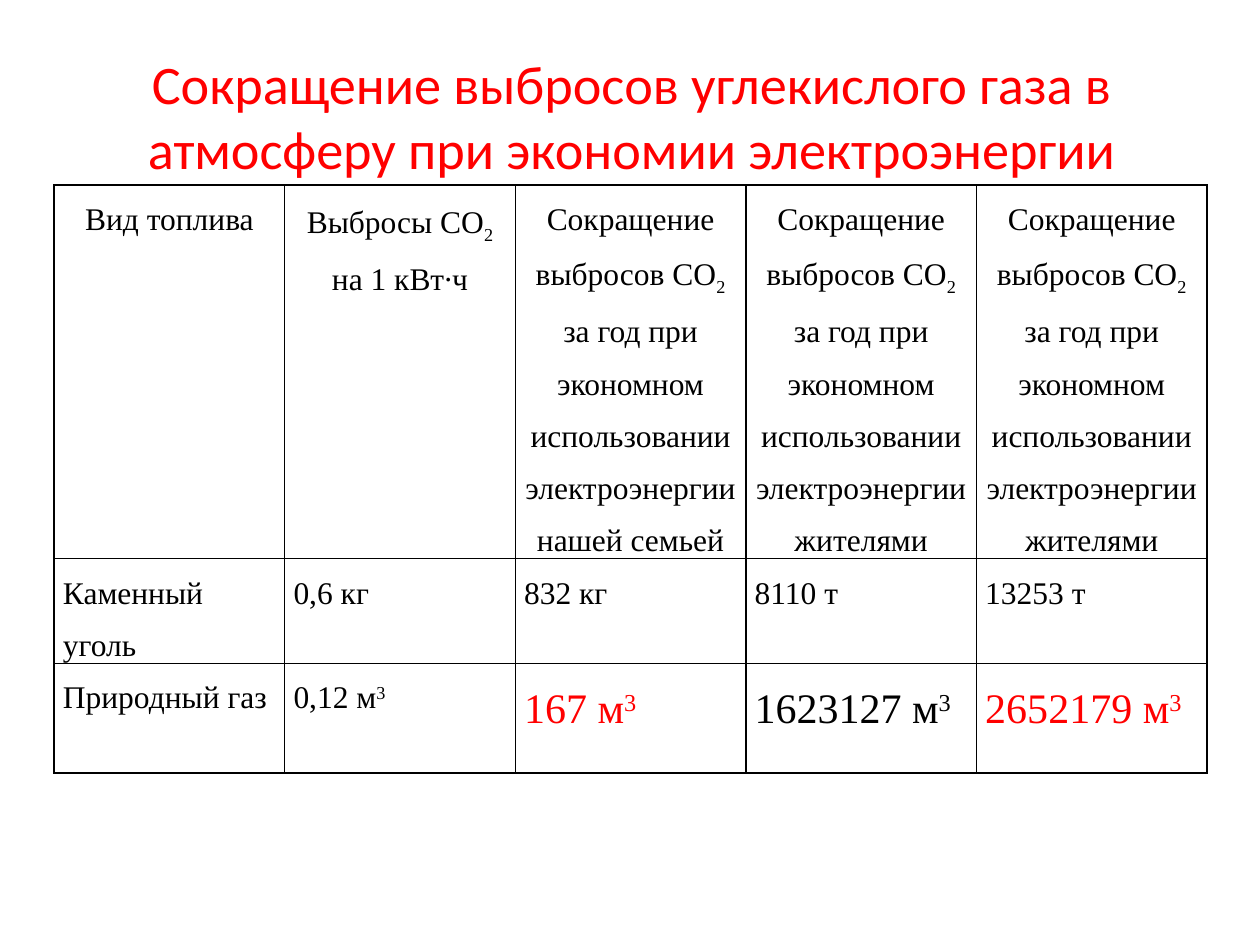
from lxml.etree import SubElement
from pptx import Presentation
from pptx.dml.color import RGBColor
from pptx.enum.text import MSO_ANCHOR, MSO_AUTO_SIZE, PP_ALIGN
from pptx.oxml.ns import qn
from pptx.util import Inches, Pt

BLACK = "000000"
RED = "FF0000"
SUBSCRIPT = -25000
SUPERSCRIPT = 30000
TITLE = "Сокращение выбросов углекислого газа в атмосферу при экономии электроэнергии"
COLUMN_WIDTH = 1.83
ROW_HEIGHTS = [2.83, 0.79, 0.87]
CELL_FORMAT = {
    "margin_left": Inches(0.07),
    "margin_right": Inches(0.07),
    "margin_top": 0,
    "margin_bottom": 0,
    "vertical_anchor": MSO_ANCHOR.TOP,
}


def color(value):
    """Turn a hex string into a colour."""
    return RGBColor.from_string(value)


def set_attributes(target, values):
    """Set every attribute named in a dict of format values."""
    for name, value in values.items():
        setattr(target, name, value)


def add_run(paragraph, text, font_name, size, font_color, baseline=0):
    """Add a formatted run, raised or lowered by its baseline."""
    run = paragraph.add_run()
    run.text = text
    set_attributes(run.font, {"name": font_name, "size": Pt(size), "bold": False})
    run.font.color.rgb = color(font_color)
    if baseline:
        run._r.get_or_add_rPr().set("baseline", str(baseline))


def add_title(slide):
    """Place and format the title placeholder."""
    title = slide.shapes.title
    set_attributes(title, {
        "left": Inches(0.51), "top": Inches(0.29),
        "width": Inches(9), "height": Inches(1.25),
    })
    set_attributes(title.text_frame, {
        "word_wrap": True,
        "auto_size": MSO_AUTO_SIZE.NONE,
        "vertical_anchor": MSO_ANCHOR.MIDDLE,
    })
    paragraph = title.text_frame.paragraphs[0]
    paragraph.alignment = PP_ALIGN.CENTER
    add_run(paragraph, TITLE, "Calibri", 31, RED)


def add_borders(cell):
    """Draw a thin black line on each side of a cell."""
    properties = cell._tc.get_or_add_tcPr()
    for side in ("a:lnL", "a:lnR", "a:lnT", "a:lnB"):
        line = SubElement(properties, qn(side), w=str(Pt(1)))
        fill = SubElement(line, qn("a:solidFill"))
        SubElement(fill, qn("a:srgbClr"), val=BLACK)


def fill_cell(cell, runs, alignment, size=18, font_color=BLACK):
    """Write the runs of one cell and set its look."""
    set_attributes(cell, CELL_FORMAT)
    add_borders(cell)
    cell.fill.background()
    paragraph = cell.text_frame.paragraphs[0]
    set_attributes(paragraph, {"alignment": alignment, "line_spacing": 1.5})
    for text, baseline in runs:
        add_run(paragraph, text, "Times New Roman", size, font_color, baseline)


def reduction_header(users):
    """Return the runs of a header for the yearly reduction by some users."""
    return [
        ("Сокращение выбросов СО", 0),
        ("2 ", SUBSCRIPT),
        (f"за год при экономном использовании электроэнергии {users}", 0),
    ]


def cubic_metres(amount):
    """Return the runs of a volume."""
    return [(f"{amount} м", 0), ("3", SUPERSCRIPT)]


def add_emissions_table(slide):
    """Add the table of emissions by kind of fuel."""
    headers = [
        [("Вид топлива", 0)],
        [("Выбросы СО", 0), ("2", SUBSCRIPT), (" на 1 кВт∙ч", 0)],
        *[reduction_header(users) for users in ("нашей семьей", "жителями", "жителями")],
    ]
    coal = ["Каменный уголь", "0,6 кг", "832 кг", "8110 т", "13253 т"]
    gas_reductions = [("167", RED), ("1623127", BLACK), ("2652179", RED)]

    table = slide.shapes.add_table(
        len(ROW_HEIGHTS), len(headers), Inches(0.43), Inches(1.47),
        Inches(COLUMN_WIDTH * len(headers)), Inches(sum(ROW_HEIGHTS)),
    ).table
    set_attributes(table, {"first_row": False, "horz_banding": False})
    for column in table.columns:
        column.width = Inches(COLUMN_WIDTH)
    for row, height in zip(table.rows, ROW_HEIGHTS):
        row.height = Inches(height)

    for column, runs in enumerate(headers):
        fill_cell(table.cell(0, column), runs, PP_ALIGN.CENTER)
    for column, text in enumerate(coal):
        fill_cell(table.cell(1, column), [(text, 0)], PP_ALIGN.JUSTIFY)
    fill_cell(table.cell(2, 0), [("Природный газ", 0)], PP_ALIGN.JUSTIFY)
    fill_cell(table.cell(2, 1), cubic_metres("0,12"), PP_ALIGN.JUSTIFY)
    for column, (amount, font_color) in enumerate(gas_reductions, start=2):
        fill_cell(table.cell(2, column), cubic_metres(amount), PP_ALIGN.JUSTIFY, 24, font_color)


def main():
    """Build the slide and save it."""
    presentation = Presentation()
    set_attributes(presentation, {"slide_width": Inches(10), "slide_height": Inches(7.5)})
    slide = presentation.slides.add_slide(presentation.slide_layouts[5])
    add_title(slide)
    add_emissions_table(slide)
    presentation.save("out.pptx")


if __name__ == "__main__":
    main()
